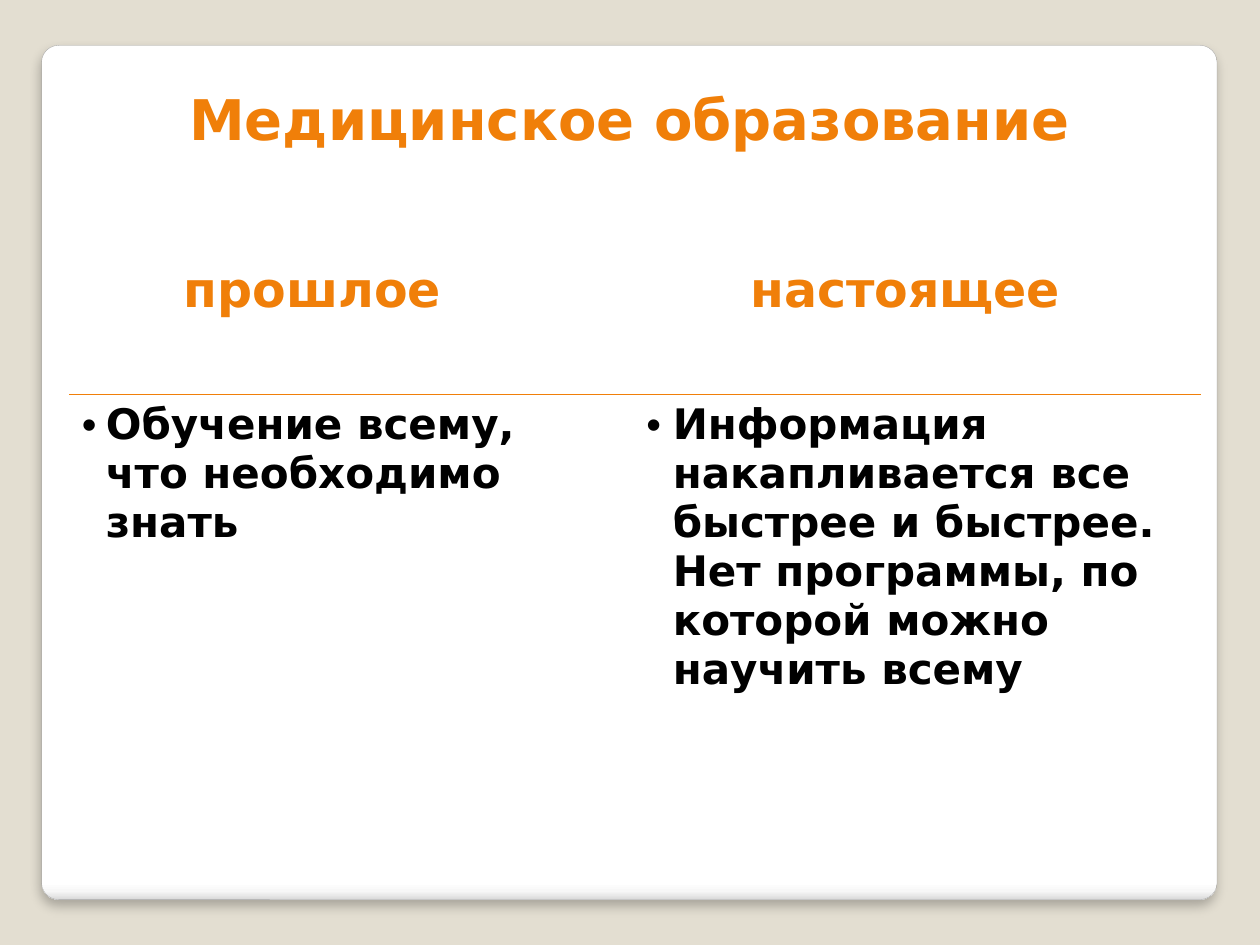
"""Build a slide comparing past and present medical education in two columns."""
from lxml.etree import SubElement
from pptx import Presentation
from pptx.dml.color import RGBColor
from pptx.enum.shapes import MSO_SHAPE
from pptx.enum.text import MSO_ANCHOR, PP_ALIGN
from pptx.oxml import parse_xml
from pptx.oxml.ns import nsdecls, qn
from pptx.util import Inches, Pt

COLORS = {"page": "E3DED1", "accent": "F07F09", "ink": "000000", "edge": "A4A4A4"}
CARD_STOPS = [(0, "FFFFFF"), (98, "FFFFFF"), (99, "F7F7F7"), (100, "DADADA")]
COLUMNS = [3.86, 0.43, 4.69]
ROWS = [1.1, 3.51]
TOPICS = [
    (0, "прошлое", "Обучение всему, что необходимо знать", 0.19, 0.19),
    (2, "настоящее", "Информация накапливается все быстрее и быстрее. \v"
     "Нет программы, по которой можно \vнаучить всему", 0.4, 0.21),
]


def write(frame, text, size, color, align=PP_ALIGN.LEFT, indent=0, hanging=0):
    frame.word_wrap = True
    paragraph = frame.paragraphs[0]
    paragraph.text = text
    paragraph.alignment = align
    for run in paragraph.runs:
        run.font.name = "DejaVu Sans"
        run.font.size = Pt(size)
        run.font.bold = True
        run.font.color.rgb = RGBColor.from_string(COLORS[color])
    if hanging:
        props = paragraph._p.get_or_add_pPr()
        props.set("marL", str(Inches(indent)))
        props.set("indent", str(-Inches(hanging)))
        SubElement(props, qn("a:buFont"), typeface="Arial")
        SubElement(props, qn("a:buChar"), char="•")


deck = Presentation()
deck.slide_width, deck.slide_height = Inches(10), Inches(7.5)
slide = deck.slides.add_slide(deck.slide_layouts[6])
slide.background.fill.solid()
slide.background.fill.fore_color.rgb = RGBColor.from_string(COLORS["page"])

card = slide.shapes.add_shape(
    MSO_SHAPE.ROUNDED_RECTANGLE, Inches(0.33), Inches(0.36), Inches(9.33), Inches(6.78))
card.adjustments[0] = 0.02
card.line.color.rgb = RGBColor.from_string(COLORS["edge"])
card.line.width = Pt(0.16)
card.fill.gradient()
card.fill.gradient_angle = 270
stops = card._element.spPr.find(qn("a:gradFill")).find(qn("a:gsLst"))
for stop in list(stops):
    stops.remove(stop)
for share, shade in CARD_STOPS:
    stop = SubElement(stops, qn("a:gs"), pos=str(share * 1000))
    SubElement(stop, qn("a:srgbClr"), val=shade)
card.shadow.inherit = False
effects = card._element.spPr.find(qn("a:effectLst"))
effects.append(parse_xml(
    f'<a:outerShdw {nsdecls("a")} blurRad="{Pt(6)}" dist="{Pt(4)}" dir="5400000" rotWithShape="0">'
    f'<a:srgbClr val="{COLORS["ink"]}"><a:alpha val="25000"/></a:srgbClr></a:outerShdw>'))

comparison = slide.shapes.add_table(
    len(ROWS), len(COLUMNS), Inches(0.55), Inches(2.03),
    Inches(sum(COLUMNS)), Inches(sum(ROWS))).table
comparison.first_row = comparison.horz_banding = False
for column, width in zip(comparison.columns, COLUMNS):
    column.width = Inches(width)
for row, height, divider in zip(comparison.rows, ROWS, ("lnB", "lnT")):
    row.height = Inches(height)
    for cell in row.cells:
        props = cell._tc.get_or_add_tcPr()
        for side in ("lnL", "lnR", "lnT", "lnB"):
            border = SubElement(props, qn(f"a:{side}"), w=str(Pt(1)))
            if side == divider:
                paint = SubElement(border, qn("a:solidFill"))
                SubElement(paint, qn("a:srgbClr"), val=COLORS["accent"])
            else:
                SubElement(border, qn("a:noFill"))
        cell.fill.background()
for column, era, lesson, indent, hanging in TOPICS:
    write(comparison.cell(0, column).text_frame, era, 28, "accent", align=PP_ALIGN.CENTER)
    write(comparison.cell(1, column).text_frame, lesson, 24, "ink",
          indent=indent, hanging=hanging)

title = slide.shapes.add_textbox(0, Inches(0.3), deck.slide_width, Inches(0.95)).text_frame
title.vertical_anchor = MSO_ANCHOR.BOTTOM
write(title, "Медицинское образование", 32, "accent", align=PP_ALIGN.CENTER)

deck.save("out.pptx")
